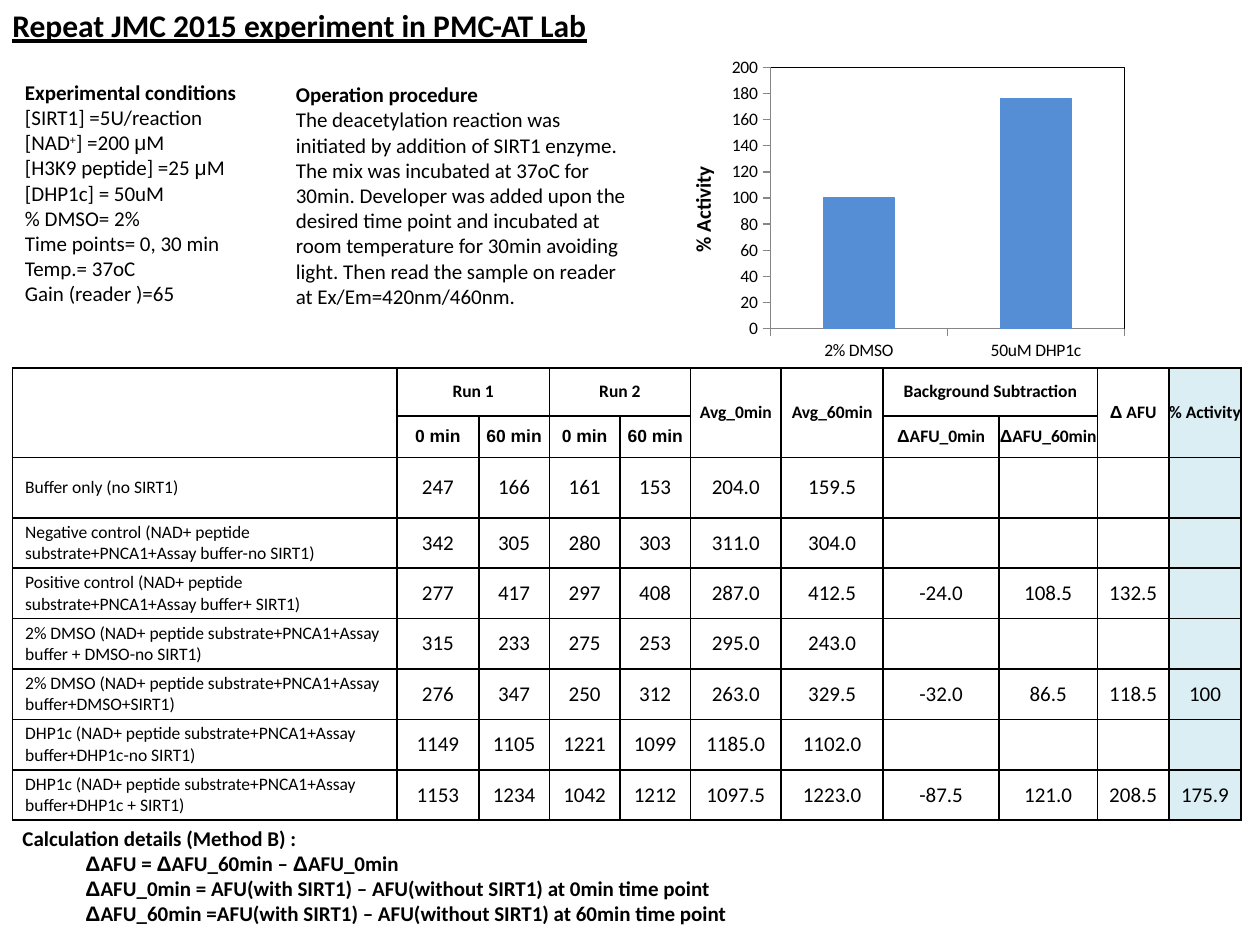
from itertools import groupby

from lxml import etree
from pptx import Presentation
from pptx.chart.data import CategoryChartData
from pptx.dml.color import RGBColor
from pptx.enum.chart import XL_CHART_TYPE as CT, XL_TICK_MARK as TICK
from pptx.enum.text import MSO_ANCHOR as ANCHOR, MSO_AUTO_SIZE as FIT, PP_ALIGN as ALIGN
from pptx.oxml import parse_xml
from pptx.oxml.ns import nsdecls, qn
from pptx.util import Inches, Pt

BLACK = RGBColor(0, 0, 0)
GRAY = RGBColor(0x86, 0x86, 0x86)
BLUE = RGBColor(0x55, 0x8E, 0xD5)
PALE = RGBColor(0xDB, 0xEE, 0xF4)
FONT, GREEK_FONT, GREEK = "Calibri", "Arial", "Δμ"

TITLE = "Repeat JMC 2015 experiment in PMC-AT Lab"
CONDITIONS = [
    "Experimental conditions",
    "[SIRT1] =5U/reaction",
    ("[NAD", "+", "] =200 μM"),
    "[H3K9 peptide] =25 μM",
    "[DHP1c] = 50uM",
    "% DMSO= 2%",
    "Time points= 0, 30 min",
    "Temp.= 37oC",
    "Gain (reader )=65",
]
PROCEDURE = [
    "Operation procedure",
    "The deacetylation reaction was initiated by addition of SIRT1 enzyme. "
    "The mix was incubated at 37oC for 30min. Developer was added upon the "
    "desired time point and incubated at room temperature for 30min avoiding "
    "light. Then read the sample on reader at Ex/Em=420nm/460nm.",
]
CALCULATION = [
    "Calculation details (Method B) :",
    "ΔAFU = ΔAFU_60min – ΔAFU_0min",
    "ΔAFU_0min = AFU(with SIRT1) – AFU(without SIRT1) at 0min time point",
    "ΔAFU_60min =AFU(with SIRT1) – AFU(without SIRT1) at 60min time point",
]

COLS = [3.05, 0.65, 0.56, 0.56, 0.56, 0.72, 0.81, 0.92, 0.78, 0.57, 0.57]
ROWS = [0.38, 0.33, 0.48] + [0.4] * 6
HEADERS = [
    (0, 0, 2, 1, ""), (0, 1, 1, 2, "Run 1"), (0, 3, 1, 2, "Run 2"),
    (0, 5, 2, 1, "Avg_0min"), (0, 6, 2, 1, "Avg_60min"),
    (0, 7, 1, 2, "Background Subtraction"),
    (0, 9, 2, 1, "Δ AFU"), (0, 10, 2, 1, "% Activity"),
    (1, 1, 1, 1, "0 min"), (1, 2, 1, 1, "60 min"),
    (1, 3, 1, 1, "0 min"), (1, 4, 1, 1, "60 min"),
    (1, 7, 1, 1, "ΔAFU_0min"), (1, 8, 1, 1, "ΔAFU_60min"),
]
RESULTS = [
    ("Buffer only (no SIRT1)", "247", "166", "161", "153", "204.0", "159.5"),
    ("Negative control (NAD+ peptide substrate+PNCA1+Assay buffer-no SIRT1)",
     "342", "305", "280", "303", "311.0", "304.0"),
    ("Positive control (NAD+ peptide substrate+PNCA1+Assay buffer+ SIRT1)",
     "277", "417", "297", "408", "287.0", "412.5", "-24.0", "108.5", "132.5"),
    ("2% DMSO (NAD+ peptide substrate+PNCA1+Assay buffer + DMSO-no SIRT1)",
     "315", "233", "275", "253", "295.0", "243.0"),
    ("2% DMSO (NAD+ peptide substrate+PNCA1+Assay buffer+DMSO+SIRT1)",
     "276", "347", "250", "312", "263.0", "329.5", "-32.0", "86.5", "118.5", "100"),
    ("DHP1c (NAD+ peptide substrate+PNCA1+Assay buffer+DHP1c-no SIRT1)",
     "1149", "1105", "1221", "1099", "1185.0", "1102.0"),
    ("DHP1c (NAD+ peptide substrate+PNCA1+Assay buffer+DHP1c + SIRT1)",
     "1153", "1234", "1042", "1212", "1097.5", "1223.0", "-87.5", "121.0", "208.5", "175.9"),
]
ACTIVITY = {"2% DMSO": 100, "50uM DHP1c": 176}
PLOT_LAYOUT = {"x": 0.23, "y": 0.05, "w": 0.75, "h": 0.83}


def set_font(font, **fmt):
    for key, value in {"name": FONT, **fmt}.items():
        setattr(font, key, value)
    font.color.rgb = BLACK


def write(p, text, name=FONT, **fmt):
    parts = (text,) if isinstance(text, str) else text
    for i, part in enumerate(parts):
        for greek, chars in groupby(part, lambda ch: ch in GREEK):
            r = p.add_run()
            r.text = "".join(chars)
            set_font(r.font, name=GREEK_FONT if greek else name, **fmt)
            if i % 2:
                r.font._element.set("baseline", "30000")


def add_text(s, box, lines, size=12, wrap=True, body_bold=False, indent=0, **fmt):
    tf = s.shapes.add_textbox(*map(Inches, box)).text_frame
    tf.word_wrap, tf.auto_size = wrap, FIT.SHAPE_TO_FIT_TEXT
    for i, line in enumerate(lines):
        p = tf.paragraphs[0] if i == 0 else tf.add_paragraph()
        if i and indent:
            p.level = 1
            p._p.get_or_add_pPr().set("marL", str(Inches(indent)))
        write(p, line, size=Pt(size), bold=i == 0 or body_bold, **fmt)


def style_cell(cell, pale):
    cell.vertical_anchor = ANCHOR.MIDDLE
    for side in ("left", "right", "top", "bottom"):
        setattr(cell, f"margin_{side}", 0)
    for edge in ("lnL", "lnR", "lnT", "lnB"):
        cell._tc.get_or_add_tcPr().append(parse_xml(
            f'<a:{edge} {nsdecls("a")} w="12700"><a:solidFill>'
            f'<a:srgbClr val="{BLACK}"/></a:solidFill></a:{edge}>'))
    if pale:
        cell.fill.solid()
        cell.fill.fore_color.rgb = PALE
    else:
        cell.fill.background()


def fill_cell(cell, text, align=ALIGN.CENTER, **fmt):
    p = cell.text_frame.paragraphs[0]
    p.alignment = align
    write(p, text, **fmt)


def add_results(s):
    table = s.shapes.add_table(len(ROWS), len(COLS), Inches(0.1), Inches(2.92),
                               Inches(sum(COLS)), Inches(sum(ROWS))).table
    table.first_row = table.horz_banding = False
    for col, width in zip(table.columns, COLS):
        col.width = Inches(width)
    for row, height in zip(table.rows, ROWS):
        row.height = Inches(height)
        for c, cell in enumerate(row.cells):
            style_cell(cell, c == len(COLS) - 1)
    for r, c, down, across, text in HEADERS:
        cell = table.cell(r, c)
        if down * across > 1:
            cell.merge(table.cell(r + down - 1, c + across - 1))
        name = GREEK_FONT if text.endswith(" min") else FONT
        fill_cell(cell, text, name=name, size=Pt(10), bold=True)
    for r, (label, *values) in enumerate(RESULTS, 2):
        table.cell(r, 0).margin_left = Inches(0.1)
        fill_cell(table.cell(r, 0), label, ALIGN.LEFT, size=Pt(10), bold=False)
        for c, value in enumerate(values, 1):
            fill_cell(table.cell(r, c), value, size=Pt(12), bold=False)


def add_activity_chart(s):
    data = CategoryChartData()
    data.categories = list(ACTIVITY)
    data.add_series("Series 1", list(ACTIVITY.values()))
    box = map(Inches, (5.25, 0.41, 3.75, 2.5))
    chart = s.shapes.add_chart(CT.COLUMN_CLUSTERED, *box, data).chart
    chart.has_legend = chart.has_title = False
    set_font(chart.font, size=Pt(10))
    plot = chart.plots[0]
    plot.vary_by_categories, plot.gap_width = False, 150
    bars = plot.series[0].format
    bars.fill.solid()
    bars.fill.fore_color.rgb = bars.line.color.rgb = BLUE
    bars.line.width = Pt(0.75)
    for axis in (chart.category_axis, chart.value_axis):
        axis.has_major_gridlines = False
        axis.major_tick_mark = TICK.OUTSIDE
        axis.format.line.color.rgb = GRAY
    value_axis = chart.value_axis
    value_axis.minimum_scale, value_axis.maximum_scale, value_axis.major_unit = 0, 200, 20
    tf = value_axis.axis_title.text_frame
    tf._txBody.bodyPr.set("rot", "-5400000")
    write(tf.paragraphs[0], "% Activity", size=Pt(12), bold=True)

    area = chart._chartSpace.chart.plotArea
    for old in area.findall(qn("c:layout")):
        area.remove(old)
    layout = parse_xml(f'<c:layout {nsdecls("c")}><c:manualLayout/></c:layout>')
    settings = {"layoutTarget": "inner", "xMode": "edge", "yMode": "edge", **PLOT_LAYOUT}
    for tag, value in settings.items():
        etree.SubElement(layout[0], qn(f"c:{tag}")).set("val", str(value))
    area.insert(0, layout)
    area.append(parse_xml(
        f'<c:spPr {nsdecls("c", "a")}><a:noFill/><a:ln w="9525"><a:solidFill>'
        f'<a:srgbClr val="{BLACK}"/></a:solidFill></a:ln></c:spPr>'))


prs = Presentation()
prs.slide_width, prs.slide_height = Inches(10), Inches(7.5)
s = prs.slides.add_slide(prs.slide_layouts[6])
add_text(s, (0, 0, 4.82, 0.4), [TITLE], size=18, wrap=False, underline=True)
add_text(s, (0.1, 0.58, 1.9, 1.92), CONDITIONS, wrap=False)
add_results(s)
add_activity_chart(s)
add_text(s, (0.08, 6.5, 9.42, 1.11), CALCULATION, body_bold=True, indent=0.5)
add_text(s, (2.25, 0.6, 2.84, 1.92), PROCEDURE)
prs.save("out.pptx")
